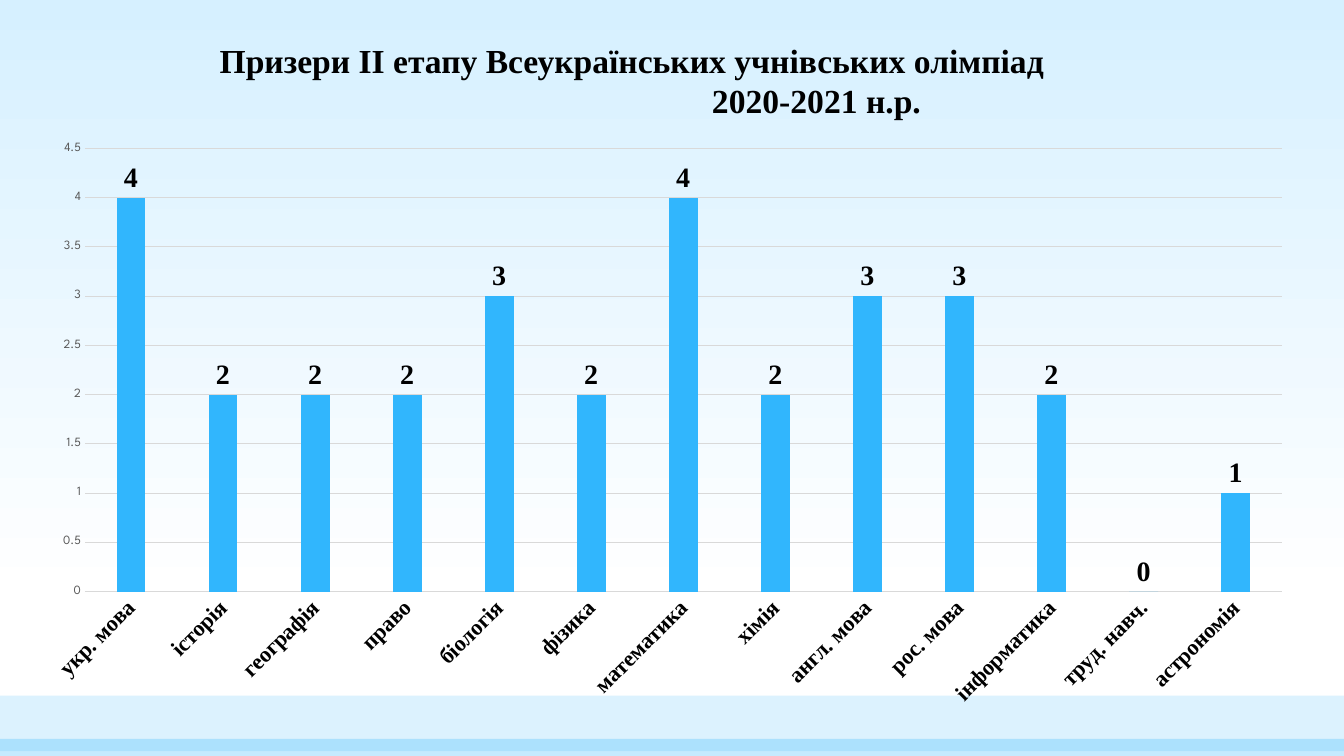
from dataclasses import dataclass

from lxml import etree
from pptx import Presentation
from pptx import util as u
from pptx.chart import data
from pptx.dml import color
from pptx.enum import chart as charts, shapes, text
from pptx.oxml import ns, parse_xml


@dataclass(frozen=True)
class Theme:
    """Colours, fonts and type sizes of the slide."""
    accent: str = "31B6FD"
    sky: str = "D6F0FF"
    white: str = "FFFFFF"
    ink: str = "000000"
    grey: str = "595959"
    rule: str = "D9D9D9"
    serif: str = "Times New Roman"
    sans: str = "League Spartan"
    title: int = 24
    value: int = 20
    subject: int = 16
    base: int = 10
    scale: int = 9


THEME = Theme()
TITLE_LINES = [("Призери ІІ етапу Всеукраїнських учнівських олімпіад", 0),
               ("2020-2021 н.р.", 9.3)]
WINNERS = {
    "укр. мова": 4, "історія": 2, "географія": 2, "право": 2, "біологія": 3,
    "фізика": 2, "математика": 4, "хімія": 2, "англ. мова": 3, "рос. мова": 3,
    "інформатика": 2, "труд. навч.": 0, "астрономія": 1,
}
PLOT_AREA = {"x": 0.0444, "y": 0.1787, "w": 0.9358, "h": 0.637}


def rgb(value):
    """Turn a hex string into a colour."""
    return color.RGBColor.from_string(value)


def set_font(font, size, name=THEME.serif, tint=THEME.ink, bold=True):
    """Format a font."""
    font.size, font.name, font.bold = u.Pt(size), name, bold
    font.color.rgb = rgb(tint)


def set_line(line):
    """Draw a thin grey rule."""
    line.color.rgb, line.width = rgb(THEME.rule), u.Pt(0.75)


def paint_background(page):
    """Fill the page with a gradient from sky blue down to white."""
    fill = page.background.fill
    fill.gradient()
    fill.gradient_angle = 270
    for stop, tint, position in zip(fill.gradient_stops, (THEME.sky, THEME.white), (0, 0.79)):
        stop.color.rgb, stop.position = rgb(tint), position


def add_band(page, top, width, height, opacity):
    """Add a translucent band across the page."""
    band = page.shapes.add_shape(shapes.MSO_SHAPE.RECTANGLE, 0, u.Cm(top), width, u.Cm(height))
    band.shadow.inherit = False
    band.line.fill.background()
    band.fill.solid()
    band.fill.fore_color.rgb = rgb(THEME.accent)
    tint = band.fill._xPr.find(".//" + ns.qn("a:srgbClr"))
    etree.SubElement(tint, ns.qn("a:alpha"), val=str(opacity * 1000))


def add_text(page, lines, left, top, width, height, **style):
    """Add centred lines, each given with its left indent in centimetres."""
    box = page.shapes.add_textbox(*map(u.Cm, (left, top, width, height)))
    frame = box.text_frame
    frame.word_wrap = True
    frame.margin_left = frame.margin_right = frame.margin_top = frame.margin_bottom = 0
    for index, (words, indent) in enumerate(lines):
        para = frame.paragraphs[0] if index == 0 else frame.add_paragraph()
        para.alignment = text.PP_ALIGN.CENTER
        para._p.get_or_add_pPr().set("marL", str(u.Cm(indent)))
        span = para.add_run()
        span.text = words
        set_font(span.font, **style)


def place_plot(chart, area):
    """Fix the inner plot area as fractions of the chart."""
    plot_area = chart._chartSpace.chart.plotArea
    for old in plot_area.findall(ns.qn("c:layout")):
        plot_area.remove(old)
    sizes = "".join(f'<c:{key} val="{value}"/>' for key, value in area.items())
    plot_area.insert(0, parse_xml(
        f'<c:layout {ns.nsdecls("c")}><c:manualLayout><c:layoutTarget val="inner"/>'
        f'<c:xMode val="edge"/><c:yMode val="edge"/>{sizes}</c:manualLayout></c:layout>'))


def format_axes(chart):
    """Style the subject axis and the value axis."""
    subjects, scale = chart.category_axis, chart.value_axis
    for axis in (subjects, scale):
        axis.major_tick_mark = axis.minor_tick_mark = charts.XL_TICK_MARK.NONE
    set_font(subjects.tick_labels.font, THEME.subject)
    subjects._element.txPr.find(ns.qn("a:bodyPr")).set("rot", "-2700000")
    set_line(subjects.format.line)
    set_font(scale.tick_labels.font, THEME.scale, THEME.sans, THEME.grey, False)
    scale.minimum_scale, scale.maximum_scale, scale.major_unit = 0, 4.5, 0.5
    scale.format.line.fill.background()
    set_line(scale.major_gridlines.format.line)


def add_winners_chart(page, winners, left, top, width, height):
    """Add the column chart of winners by subject."""
    numbers = data.CategoryChartData()
    numbers.categories = list(winners)
    numbers.add_series("Series 1", list(winners.values()))
    chart = page.shapes.add_chart(charts.XL_CHART_TYPE.COLUMN_CLUSTERED,
                                  *map(u.Cm, (left, top, width, height)), numbers).chart
    chart.has_title = chart.has_legend = False
    set_font(chart.font, THEME.base, THEME.sans, bold=False)
    place_plot(chart, PLOT_AREA)
    format_axes(chart)
    plot = chart.plots[0]
    plot.vary_by_categories = False
    plot.gap_width, plot.overlap = 219, -27
    fill = plot.series[0].format.fill
    fill.solid()
    fill.fore_color.rgb = rgb(THEME.accent)
    labels = plot.series[0].data_labels
    labels.show_value = True
    labels.position = charts.XL_LABEL_POSITION.OUTSIDE_END
    set_font(labels.font, THEME.value)


def main():
    """Build the slide and save it."""
    deck = Presentation()
    deck.slide_width, deck.slide_height = u.Cm(33.87), u.Cm(19.05)
    page = deck.slides.add_slide(deck.slide_layouts[6])
    paint_background(page)
    add_band(page, 17.53, deck.slide_width, 1.4, 17)
    add_band(page, 18.62, deck.slide_width, 0.43, 28)
    add_winners_chart(page, WINNERS, 0.71, 0.61, 32.23, 17.53)
    add_text(page, TITLE_LINES, 5.08, 1, 21.69, 2, size=THEME.title)
    deck.save("out.pptx")


if __name__ == "__main__":
    main()
